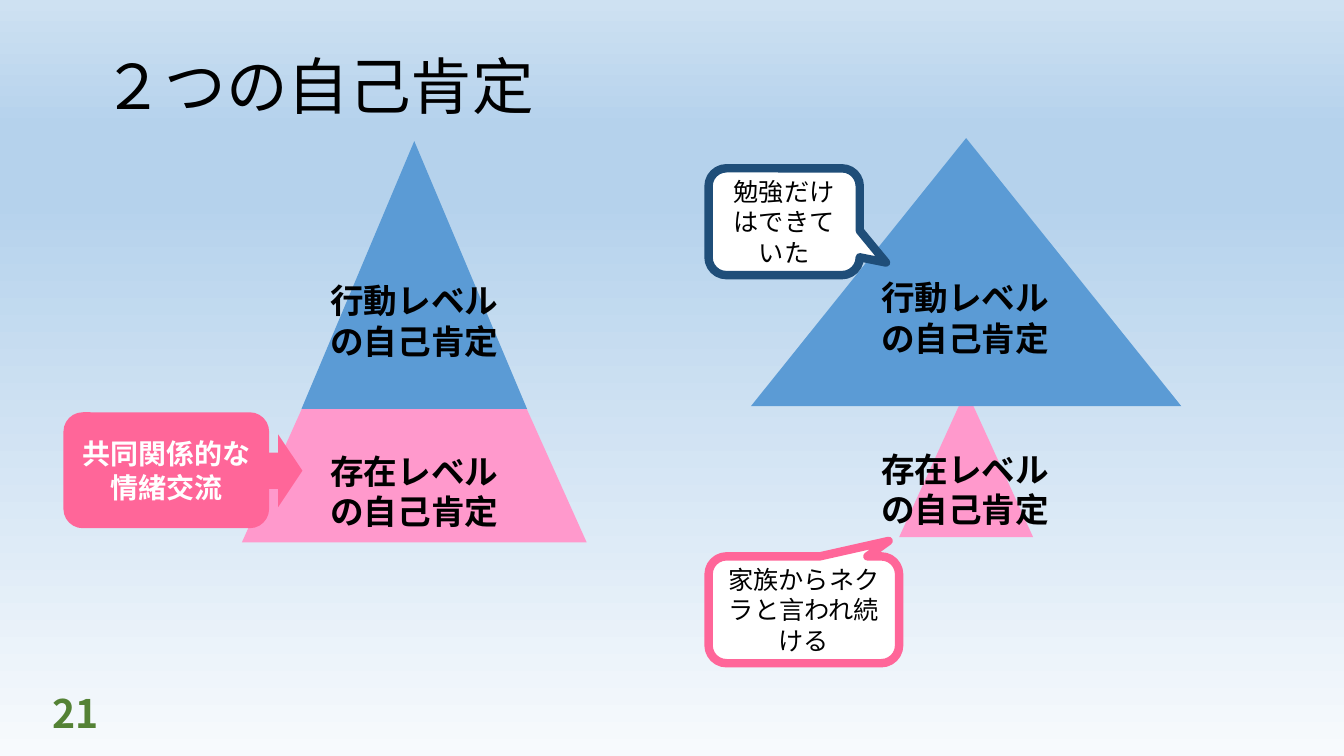
from dataclasses import dataclass
from typing import Optional

from lxml.etree import SubElement
from pptx import Presentation
from pptx.dml.color import RGBColor
from pptx.enum.shapes import MSO_SHAPE as Preset
from pptx.enum.text import MSO_ANCHOR as Anchor, MSO_AUTO_SIZE as AutoSize, PP_ALIGN as Align
from pptx.oxml.ns import qn
from pptx.util import Pt

FONT = "Noto Sans CJK JP"
COLORS = {
    "black": "000000",
    "white": "FFFFFF",
    "action": "5B9BD5",
    "existence": "FF99CC",
    "rose": "FF6699",
    "navy": "1F4E79",
    "number": "548235",
}
BACKGROUND_STOPS = ((0, "F7FAFD"), (74, "B5D2EC"), (83, "B5D2EC"), (100, "CEE1F2"))
ACTION_LABEL = "行動レベル\nの自己肯定"
EXISTENCE_LABEL = "存在レベル\nの自己肯定"


@dataclass(frozen=True)
class Style:
    size: float
    color: str = "black"
    bold: bool = False
    align: Align = Align.CENTER


@dataclass(frozen=True)
class Label:
    box: tuple[float, float, float, float]
    text: str
    style: Style
    anchor: Anchor = Anchor.TOP


@dataclass(frozen=True)
class Figure:
    preset: Preset
    box: tuple[float, float, float, float]
    fill: str
    adjustments: tuple[float, ...] = ()
    outline: Optional[str] = None
    text: str = ""
    style: Optional[Style] = None


LEVEL = Style(24, bold=True)
REMARK = Style(18)
EXCHANGE = Style(20, "white", bold=True)
NUMBER = Style(28, "number", bold=True, align=Align.LEFT)
TITLE = Style(44, align=Align.LEFT)

ITEMS = (
    Label((30.24, 493.2, 216, 31.68), "21", NUMBER, Anchor.MIDDLE),
    Figure(Preset.ISOSCELES_TRIANGLE, (215.28, 100.8, 161.28, 191.52), "action"),
    Figure(Preset.TRAPEZOID, (172.8, 292.32, 246.24, 95.04), "existence", (0.449,)),
    Label((192.96, 318.24, 205.92, 65.52), EXISTENCE_LABEL, LEVEL),
    Label((192.96, 196.56, 205.92, 65.52), ACTION_LABEL, LEVEL),
    Figure(Preset.RIGHT_ARROW, (181.44, 310.32, 34.56, 51.84), "rose"),
    Figure(Preset.ROUNDED_RECTANGLE, (45.36, 294.48, 146.88, 82.8), "rose",
           text="共同関係的な\n情緒交流", style=EXCHANGE),
    Figure(Preset.TRAPEZOID, (642.24, 278.64, 95.76, 105.12), "existence", (0.695,)),
    Label((556.56, 316.8, 265.68, 65.52), EXISTENCE_LABEL, LEVEL),
    Figure(Preset.ISOSCELES_TRIANGLE, (536.4, 98.64, 307.44, 191.52), "action"),
    Label((556.56, 194.4, 265.68, 65.52), ACTION_LABEL, LEVEL),
    Figure(Preset.ROUNDED_RECTANGULAR_CALLOUT, (506.16, 397.44, 136.08, 76.32), "white",
           (0.445, -0.645, 0.167), "rose", "家族からネクラと言われ続ける", REMARK),
    Figure(Preset.ROUNDED_RECTANGULAR_CALLOUT, (506.16, 120.24, 108, 76.32), "white",
           (0.674, 0.382, 0.167), "navy", "勉強だけはできていた", REMARK),
)


def rgb(name: str) -> RGBColor:
    return RGBColor.from_string(COLORS[name])


def write(frame, text: str, style: Style, anchor: Anchor) -> None:
    frame.word_wrap = True
    frame.auto_size = AutoSize.NONE
    frame.vertical_anchor = anchor
    frame.text = text
    for paragraph in frame.paragraphs:
        paragraph.alignment = style.align
        font = paragraph.font
        font.name = FONT
        font.size = Pt(style.size)
        font.bold = style.bold
        font.color.rgb = rgb(style.color)
        latin = paragraph._p.find(".//" + qn("a:latin"))
        east_asian = SubElement(latin.getparent(), qn("a:ea"), typeface=FONT)
        latin.addnext(east_asian)


def draw_label(slide, label: Label) -> None:
    shape = slide.shapes.add_textbox(*map(Pt, label.box))
    write(shape.text_frame, label.text, label.style, label.anchor)


def draw_figure(slide, figure: Figure) -> None:
    shape = slide.shapes.add_shape(figure.preset, *map(Pt, figure.box))
    shape.shadow.inherit = False
    for index, value in enumerate(figure.adjustments):
        shape.adjustments[index] = value
    shape.fill.solid()
    shape.fill.fore_color.rgb = rgb(figure.fill)
    if figure.outline:
        shape.line.color.rgb = rgb(figure.outline)
        shape.line.width = Pt(6)
    else:
        shape.line.fill.background()
    if figure.style:
        write(shape.text_frame, figure.text, figure.style, Anchor.MIDDLE)


def paint_background(slide) -> None:
    fill = slide.background.fill
    fill.gradient()
    fill.gradient_angle = 90
    stops = slide.element.find(".//" + qn("a:gsLst"))
    for stop in list(stops):
        stops.remove(stop)
    for position, color in BACKGROUND_STOPS:
        stop = SubElement(stops, qn("a:gs"), pos=str(position * 1000))
        SubElement(stop, qn("a:srgbClr"), val=color)


def place_title(slide, text: str) -> None:
    title = slide.shapes.title
    title.left, title.top, title.width, title.height = map(Pt, (66.24, 28.8, 828, 69.84))
    write(title.text_frame, text, TITLE, Anchor.MIDDLE)
    title.text_frame.paragraphs[0].line_spacing = 0.9


def main() -> None:
    presentation = Presentation()
    presentation.slide_width, presentation.slide_height = Pt(960), Pt(540)
    slide = presentation.slides.add_slide(presentation.slide_layouts[5])
    paint_background(slide)
    place_title(slide, "２つの自己肯定")
    for item in ITEMS:
        if isinstance(item, Label):
            draw_label(slide, item)
        else:
            draw_figure(slide, item)
    presentation.save("out.pptx")


if __name__ == "__main__":
    main()
